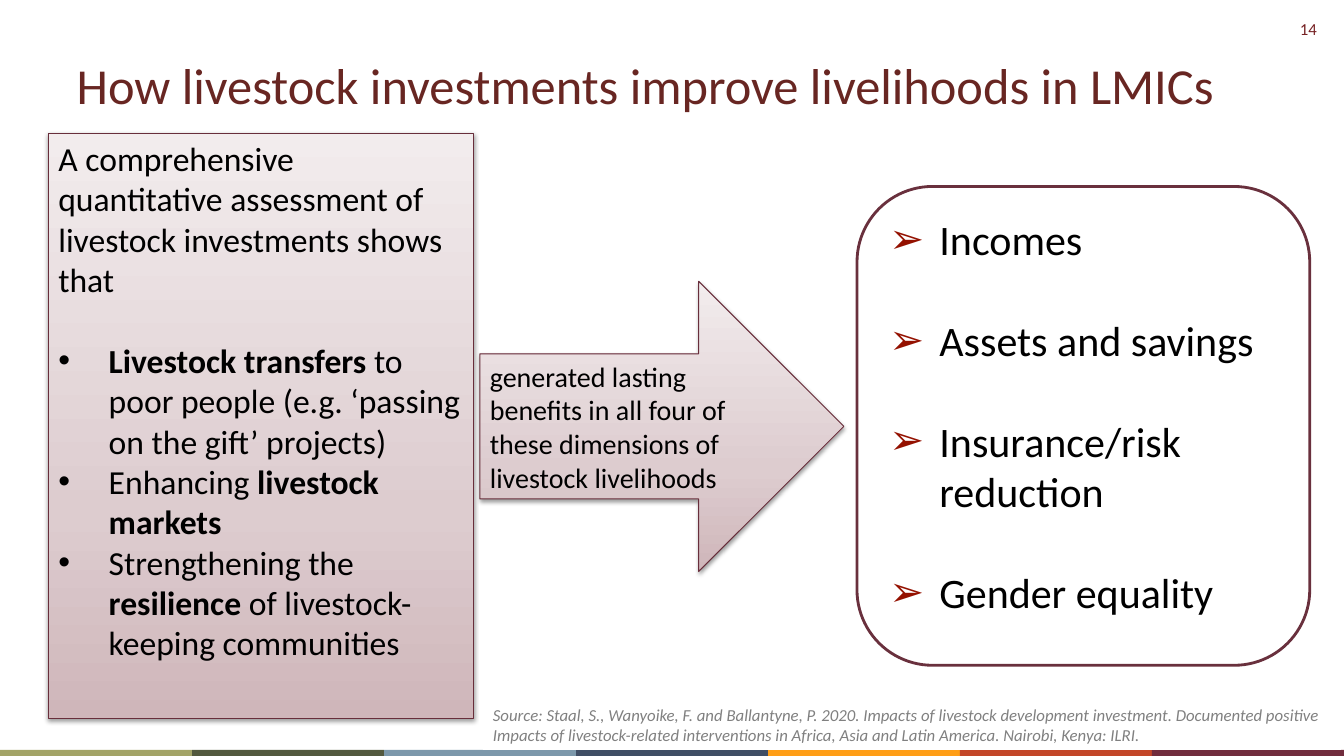
from lxml import etree
from pptx import Presentation
from pptx.dml.color import RGBColor
from pptx.enum.shapes import MSO_SHAPE as SHAPE
from pptx.enum.text import MSO_ANCHOR as ANCHOR, PP_ALIGN as ALIGN
from pptx.oxml import parse_xml
from pptx.oxml.ns import nsdecls, qn
from pptx.util import Inches, Pt

FONT = "Calibri"
MAROON = "682622"
GRADIENT = [(0, "CFB6BA"), (35, "DDCCCF"), (100, "F2ECED")]
STRIP = ["A3A467", "53593E", "7C98AB", "404E65", "FF9E16", "C34628", "712C3D"]

INTRO = "A comprehensive quantitative assessment of livestock investments shows that"
# Each bullet is a list of (text, bold) runs.
INVESTMENTS = [
    [("Livestock transfers ", True),
     ("to poor people (e.g. ‘passing on the gift’ projects)", False)],
    [("Enhancing ", False), ("livestock markets", True)],
    [("Strengthening the ", False), ("resilience", True),
     (" of livestock-keeping communities", False)],
]
BENEFITS = ["Incomes", "Assets and savings", "Insurance/risk reduction", "Gender equality"]
SOURCE = [
    "Source: Staal, S., Wanyoike, F. and Ballantyne, P. 2020. "
    "Impacts of livestock development investment. Documented positive",
    "Impacts of livestock-related interventions in Africa, Asia and Latin America. "
    "Nairobi, Kenya: ILRI.",
]


def rgb(color):
    return RGBColor.from_string(color)


def style(p, size, color="000000", italic=False):
    for r in p.runs:
        r.font.name = FONT
        r.font.size = Pt(size)
        r.font.color.rgb = rgb(color)
        r.font.italic = italic


def add_bullet(p, char, color="000000"):
    pPr = p._p.get_or_add_pPr()
    pPr.set("marL", str(Inches(0.5)))
    pPr.set("indent", str(-Inches(0.5)))
    clr = etree.SubElement(pPr, qn("a:buClr"))
    etree.SubElement(clr, qn("a:srgbClr"), val=color)
    etree.SubElement(pPr, qn("a:buFont"), typeface="Arial")
    etree.SubElement(pPr, qn("a:buChar"), char=char)


def add_box(slide, kind, box, fill=None, line=None, width=0.75, anchor=ANCHOR.TOP):
    sp = slide.shapes.add_shape(kind, *map(Inches, box))
    sp.shadow.inherit = False
    if fill:
        sp.fill.solid()
        sp.fill.fore_color.rgb = rgb(fill)
    if line:
        sp.line.color.rgb = rgb(line)
        sp.line.width = Pt(width)
    else:
        sp.line.fill.background()
    tf = sp.text_frame
    tf.word_wrap = True
    tf.vertical_anchor = anchor
    tf.paragraphs[0].alignment = ALIGN.LEFT
    return sp


def add_shaded_box(slide, kind, box, anchor=ANCHOR.TOP):
    """Add a box with the pink gradient, a maroon outline and a soft shadow."""
    sp = add_box(slide, kind, box, line="682E3B", anchor=anchor)
    sp.fill.gradient()
    sp.fill.gradient_angle = 90
    stops = sp._element.spPr.find(".//" + qn("a:gsLst"))
    stops.clear()
    for position, color in GRADIENT:
        gs = etree.SubElement(stops, qn("a:gs"), pos=str(position * 1000))
        etree.SubElement(gs, qn("a:srgbClr"), val=color)
    sp._element.spPr.find(qn("a:effectLst")).append(parse_xml(
        f'<a:outerShdw {nsdecls("a")} blurRad="{Pt(3.1)}" dist="{Pt(1.6)}" dir="5400000" '
        'rotWithShape="0"><a:srgbClr val="000000"><a:alpha val="38000"/></a:srgbClr>'
        '</a:outerShdw>'))
    return sp


def add_title(slide, box, text):
    title = slide.shapes.title
    title.left, title.top, title.width, title.height = map(Inches, box)
    tf = title.text_frame
    tf.text = text
    tf.vertical_anchor = ANCHOR.MIDDLE
    tf.paragraphs[0].alignment = ALIGN.LEFT
    style(tf.paragraphs[0], 36, MAROON)


def add_slide_number(slide, box, number):
    tf = slide.shapes.add_textbox(*map(Inches, box)).text_frame
    tf.word_wrap = True
    tf.text = number
    tf.paragraphs[0].alignment = ALIGN.RIGHT
    style(tf.paragraphs[0], 12, "762123")


def add_color_strip(slide, box):
    left, top, width, height = box
    step = width / len(STRIP)
    for i, color in enumerate(STRIP):
        add_box(slide, SHAPE.RECTANGLE, (left + i * step, top, step, height), color)


def add_investments(slide, box):
    tf = add_shaded_box(slide, SHAPE.RECTANGLE, box).text_frame
    tf.text = INTRO
    style(tf.paragraphs[0], 24)
    for i, runs in enumerate(INVESTMENTS):
        p = tf.add_paragraph()
        p.alignment = ALIGN.LEFT
        add_bullet(p, "•")
        if i == 0:
            p.space_before = Pt(29)
        for text, bold in runs:
            r = p.add_run()
            r.text = text
            r.font.bold = bold
        style(p, 24)


def add_arrow(slide, box, text):
    tf = add_shaded_box(slide, SHAPE.RIGHT_ARROW, box, ANCHOR.MIDDLE).text_frame
    tf.text = text
    style(tf.paragraphs[0], 20)


def add_benefits(slide, box):
    tf = add_box(slide, SHAPE.ROUNDED_RECTANGLE, box, "FFFFFF", "69303D", 2).text_frame
    for i, benefit in enumerate(BENEFITS):
        p = tf.add_paragraph() if i else tf.paragraphs[0]
        p.text = benefit
        p.alignment = ALIGN.LEFT
        add_bullet(p, "➢", "941100")
        if i:
            p.space_before = Pt(36)
        style(p, 30)


def add_source(slide, box):
    tf = add_box(slide, SHAPE.RECTANGLE, box, "FFFFFF", anchor=ANCHOR.MIDDLE).text_frame
    tf.word_wrap = False
    tf.text = "\n".join(SOURCE)
    for p in tf.paragraphs:
        p.alignment = ALIGN.LEFT
        style(p, 12, "808080", italic=True)


def main():
    prs = Presentation()
    prs.slide_width, prs.slide_height = Inches(13.33), Inches(7.5)
    slide = prs.slides.add_slide(prs.slide_layouts[5])
    add_slide_number(slide, (12.46, 0.14, 0.7, 0.3), "14")
    add_color_strip(slide, (0, 7.44, 13.33, 0.06))
    add_title(slide, (0.66, 0.47, 12, 0.74),
              "How livestock investments improve livelihoods in LMICs")
    add_benefits(slide, (8.5, 1.85, 4.49, 4.75))
    add_source(slide, (4.79, 6.94, 8.51, 0.5))
    add_investments(slide, (0.48, 1.32, 4.22, 5.81))
    add_arrow(slide, (4.76, 2.79, 3.61, 2.88),
              "generated lasting benefits in all four of these dimensions "
              "of livestock livelihoods")
    prs.save("out.pptx")


if __name__ == "__main__":
    main()
